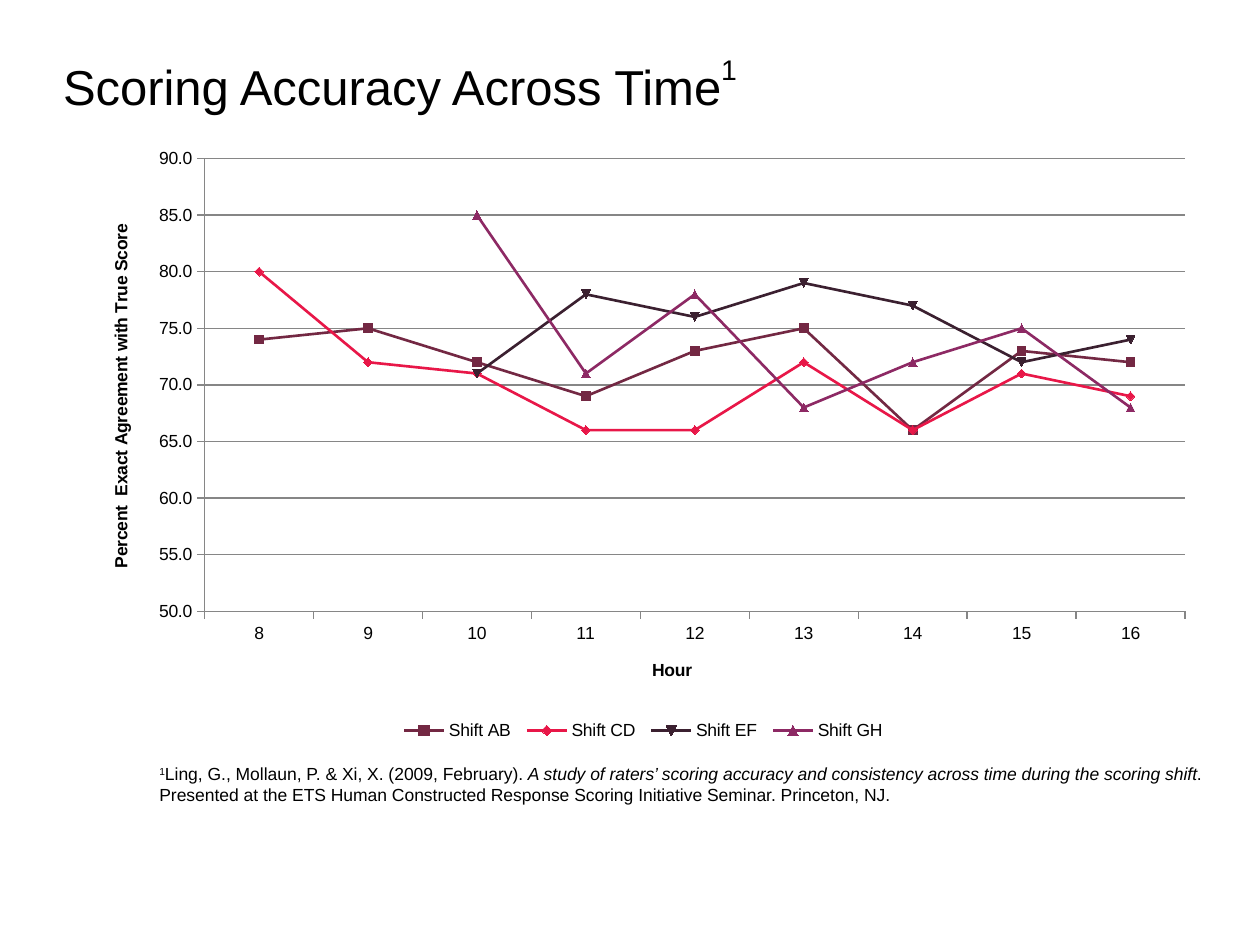
from lxml.etree import SubElement
from pptx import Presentation
from pptx.chart.data import CategoryChartData
from pptx.dml.color import RGBColor
from pptx.enum.chart import XL_CHART_TYPE as ChartType, XL_LEGEND_POSITION as LegendPos
from pptx.enum.chart import XL_MARKER_STYLE as Marker, XL_TICK_MARK as Tick
from pptx.enum.text import MSO_ANCHOR as Anchor, PP_ALIGN as Align
from pptx.util import Inches, Pt

FONT = "Arial"
BLACK = "000000"
GRID = "868686"


def paint(target, color):
    target.rgb = RGBColor.from_string(color)


def add_run(paragraph, text, size, italic=False, raised=0):
    run = paragraph.add_run()
    run.text = text
    run.font.name = FONT
    run.font.size = Pt(size)
    run.font.italic = italic
    paint(run.font.color, BLACK)
    if raised:
        run.font._element.set("baseline", str(raised * 1000))


deck = Presentation()
deck.slide_width, deck.slide_height = Inches(10), Inches(7.5)
col, row = deck.slide_width // 120, deck.slide_height // 90
slide = deck.slides.add_slide(deck.slide_layouts[5])

heading = slide.shapes.title
heading.left, heading.top = 6 * col, 5 * row
heading.width, heading.height = 108 * col, int(7.5 * row)
frame = heading.text_frame
frame.margin_left = frame.margin_right = frame.margin_top = frame.margin_bottom = 0
frame.vertical_anchor = Anchor.TOP
frame.word_wrap = True
line = frame.paragraphs[0]
line.alignment = Align.LEFT
add_run(line, "Scoring Accuracy Across Time", 28)
add_run(line, "1", 28, raised=50)

citation = slide.shapes.add_textbox(14 * col, Inches(6.01), 104 * col, Inches(0.74)).text_frame
citation.word_wrap = True
source = citation.paragraphs[0]
add_run(source, "1", 10, raised=30)
add_run(source, "Ling, G., Mollaun, P. & Xi, X. (2009, February). ", 10)
add_run(source, "A study of raters’ scoring accuracy and consistency across time during the scoring shift", 10, italic=True)
add_run(source, ". Presented at the ETS Human Constructed Response Scoring Initiative Seminar. Princeton, NJ.", 10)

shifts = [
    ("Shift AB ", "732843", [74, 75, 72, 69, 73, 75, 66, 73, 72]),
    ("Shift CD ", "E81748", [80, 72, 71, 66, 66, 72, 66, 71, 69]),
    ("Shift EF ", "3B2030", [None, None, 71, 78, 76, 79, 77, 72, 74]),
    ("Shift GH ", "8D2964", [None, None, 85, 71, 78, 68, 72, 75, 68]),
]
accuracy = CategoryChartData(number_format="#,##0.0")
accuracy.categories = range(8, 17)
for name, color, scores in shifts:
    accuracy.add_series(name, scores)

chart = slide.shapes.add_chart(ChartType.LINE_MARKERS, 8 * col, 13 * row,
                               107 * col, 58 * row, accuracy).chart
chart.has_title = False
chart.font.name = FONT
chart.font.size = Pt(10)
paint(chart.font.color, BLACK)
chart.has_legend = True
chart.legend.position = LegendPos.BOTTOM
chart.legend.include_in_layout = False
chart.plots[0].vary_by_categories = False

for series, (name, color, scores) in zip(chart.plots[0].series, shifts):
    series.smooth = False
    series.format.line.width = Pt(1.5)
    paint(series.format.line.color, color)
    series.marker.style = Marker.AUTOMATIC
    series.marker.size = 5
    series.marker.format.fill.solid()
    paint(series.marker.format.fill.fore_color, color)
    paint(series.marker.format.line.color, color)

hours, percent = chart.category_axis, chart.value_axis
percent.minimum_scale, percent.maximum_scale, percent.major_unit = 50, 90, 5
percent.tick_labels.number_format = "#,##0.0"
percent.tick_labels.number_format_is_linked = False
percent.has_major_gridlines = True
paint(percent.major_gridlines.format.line.color, GRID)
for axis, label in ((hours, "Hour"), (percent, "Percent  Exact Agreement with True Score")):
    axis.major_tick_mark = Tick.OUTSIDE
    axis.minor_tick_mark = Tick.NONE
    paint(axis.format.line.color, GRID)
    axis.has_title = True
    caption = axis.axis_title.text_frame.paragraphs[0]
    add_run(caption, label, 10)
    caption.runs[0].font.bold = True

deck.save("out.pptx")
